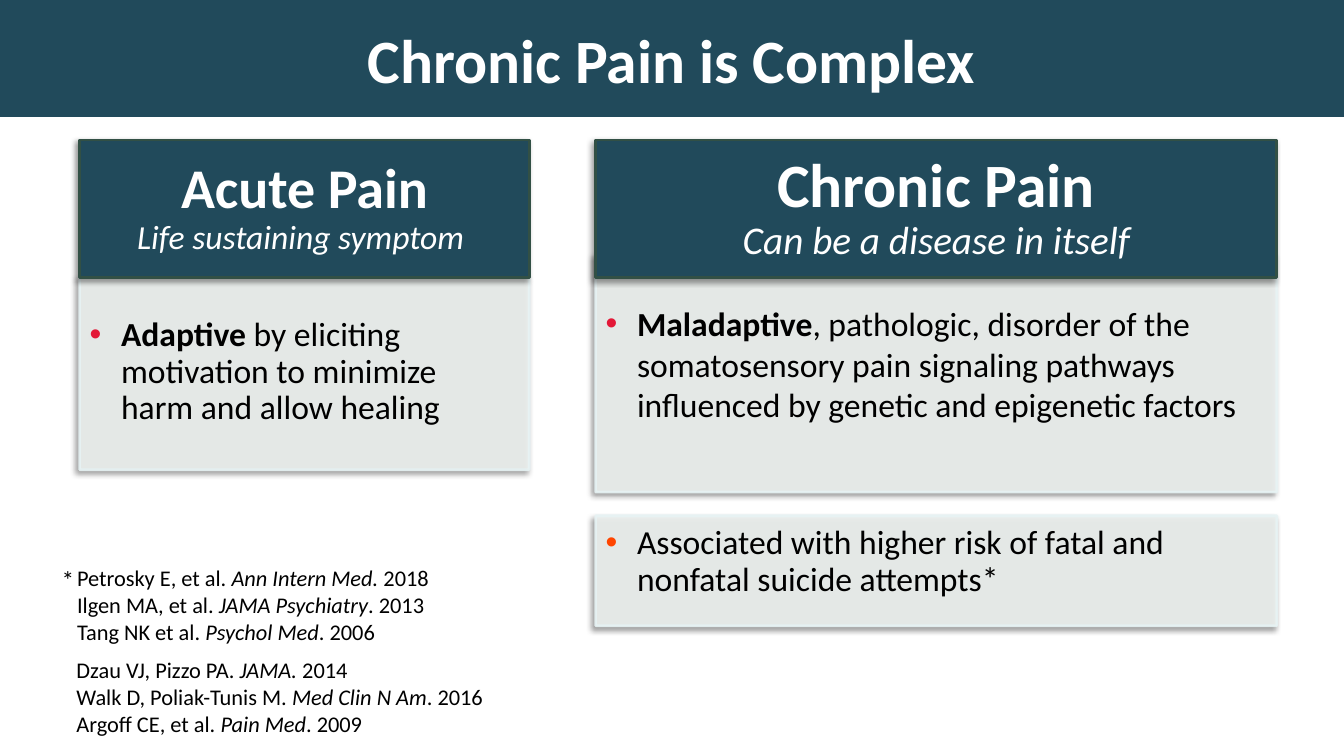
from pptx import Presentation
from pptx.dml.color import RGBColor
from pptx.enum.shapes import MSO_SHAPE
from pptx.enum.text import MSO_ANCHOR, MSO_AUTO_SIZE, PP_ALIGN
from pptx.oxml import parse_xml
from pptx.oxml.ns import nsdecls, qn
from pptx.util import Pt

TEAL, WHITE, BLACK = "214A5B", "FFFFFF", "000000"
NS = nsdecls("a")


def paint(color, code):
    """Set a font, fill or line colour from a hex string."""
    color.rgb = RGBColor.from_string(code)


def write(para, runs, size, code):
    """Fill a paragraph with (text, style) runs; style is "", "b" or "i"."""
    para.font.name, para.font.size = "Calibri", Pt(size)
    paint(para.font.color, code)
    for text, style in runs:
        run = para.add_run()
        run.text = text
        if style:
            run.font.bold = style == "b"
            run.font.italic = style == "i"


deck = Presentation()
deck.slide_width, deck.slide_height = Pt(960), Pt(540)
slide = deck.slides.add_slide(deck.slide_layouts[5])

title = slide.shapes.title
title.left, title.top, title.width, title.height = Pt(0), Pt(0), Pt(960), Pt(83.5)
title.fill.solid()
paint(title.fill.fore_color, TEAL)
frame = title.text_frame
frame.auto_size = MSO_AUTO_SIZE.NONE
frame.vertical_anchor = MSO_ANCHOR.MIDDLE
frame.paragraphs[0].alignment = PP_ALIGN.CENTER
write(frame.paragraphs[0], [("Chronic Pain is Complex", "b")], 44, WHITE)

# Panels: column, top, height, top inset, and either headings or a bullet
acute, chronic = (57, 321), (425.5, 486.5)
adapt = [("Adaptive ", "b"),
         ("by eliciting motivation to minimize harm and allow healing", "")]
malad = [("Maladaptive", "b"),
         (", pathologic, disorder of the somatosensory pain signaling pathways "
          "influenced by genetic and epigenetic factors", "")]
risk = [("Associated with higher risk of fatal and nonfatal suicide attempts*", "")]
panels = [
    (acute, 198, 137.5, 29, 0.9, "E31837", adapt),
    (acute, 100, 98, 8.5, 0.9, None,
     [("Acute Pain", "b", 40), ("Life sustaining symptom ", "i", 24)]),
    (chronic, 182, 169.5, 34.5, 1, "E31837", malad),
    (chronic, 100, 98, 8.5, 0.9, None,
     [("Chronic Pain", "b", 44), ("Can be a disease in itself", "i", 28)]),
    (chronic, 368.5, 78.5, 7, 0.9, "FF4500", risk),
]
for (left, width), top, height, inset, pitch, dot, words in panels:
    panel = slide.shapes.add_shape(
        MSO_SHAPE.RECTANGLE, Pt(left), Pt(top), Pt(width), Pt(height))
    panel.fill.solid()
    paint(panel.fill.fore_color, "ECF0EE" if dot else TEAL)
    paint(panel.line.color, "E7F3F4" if dot else "325045")
    panel.line.width = Pt(2)
    panel.shadow.inherit = False
    props = panel._element.spPr
    if dot:
        for tone in list(props.iter(qn("a:srgbClr"))):
            tone.append(parse_xml(f'<a:alpha {NS} val="90000"/>'))
    props.find(qn("a:effectLst")).append(parse_xml(
        f'<a:outerShdw {NS} blurRad="{Pt(4)}" dist="{Pt(3)}" dir="8100000" '
        'algn="tr" rotWithShape="0"><a:srgbClr val="000000">'
        '<a:alpha val="40000"/></a:srgbClr></a:outerShdw>'))

    frame = panel.text_frame
    frame.word_wrap = True
    frame.margin_top = Pt(inset)
    if dot:
        frame.vertical_anchor = MSO_ANCHOR.TOP
        frame.margin_left, frame.margin_right = Pt(7), Pt(10)
        frame.margin_bottom = Pt(11.5)
        para = frame.paragraphs[0]
        para.alignment = PP_ALIGN.LEFT
        para.line_spacing = pitch
        write(para, words, 24, BLACK)
        rules = para._p.get_or_add_pPr()
        rules.set("marL", str(Pt(22.5)))
        rules.set("indent", str(Pt(-22.5)))
        mark = rules.find(qn("a:lnSpc"))
        for tag in (f'<a:buChar {NS} char="•"/>',
                    f'<a:buFont {NS} typeface="Arial"/>',
                    f'<a:buClr {NS}><a:srgbClr val="{dot}"/></a:buClr>'):
            mark.addnext(parse_xml(tag))
    else:
        frame.vertical_anchor = MSO_ANCHOR.MIDDLE
        frame.margin_left = frame.margin_right = Pt(16)
        frame.margin_bottom = Pt(inset)
        for n, (text, style, size) in enumerate(words):
            para = frame.add_paragraph() if n else frame.paragraphs[0]
            para.alignment = PP_ALIGN.CENTER
            para.line_spacing = pitch
            write(para, [(text, style)], size, WHITE)

# References
notes = [
    (47.5, 465, 309, 65.5, 16, [
        [("Dzau VJ, Pizzo PA. ", ""), ("JAMA. ", "i"), ("2014", "")],
        [("Walk D, Poliak-Tunis M. ", ""), ("Med Clin N Am", "i"), (". 2016", "")],
        [("Argoff CE, et al. ", ""), ("Pain Med", "i"), (". 2009", "")]]),
    (48, 399.5, 270, 65.5, 16, [
        [("Petrosky E, et al. ", ""), ("Ann Intern Med. ", "i"), ("2018", "")],
        [("Ilgen MA, et al. ", ""), ("JAMA Psychiatry", "i"), (". 2013", "")],
        [("Tang NK et al. ", ""), ("Psychol Med", "i"), (". 2006", "")]]),
    (37, 399.5, 23.5, 29, 18, [[("*", "")]]),
]
for left, top, width, height, size, lines in notes:
    note = slide.shapes.add_textbox(Pt(left), Pt(top), Pt(width), Pt(height))
    frame = note.text_frame
    frame.word_wrap = False
    for n, runs in enumerate(lines):
        para = frame.add_paragraph() if n else frame.paragraphs[0]
        write(para, runs, size, BLACK)

deck.save("out.pptx")
